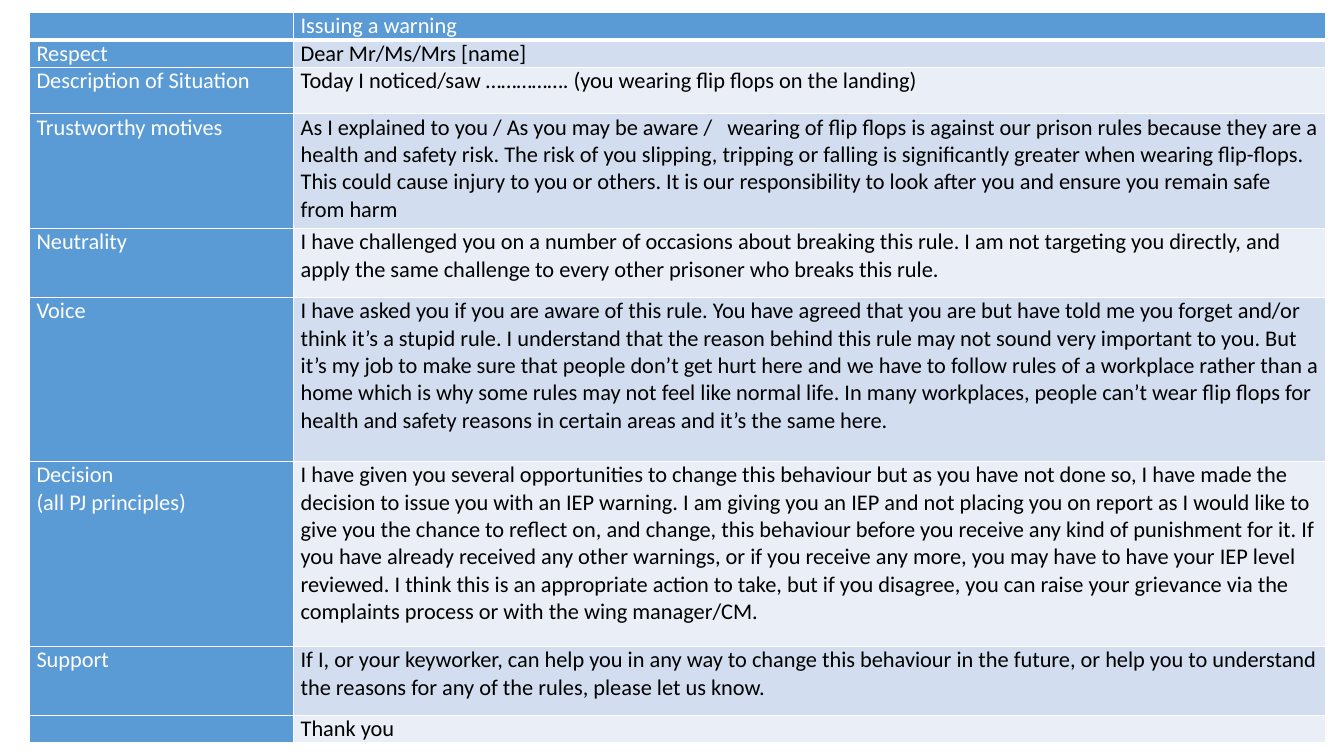
from lxml.etree import SubElement
from pptx import Presentation
from pptx.dml.color import RGBColor
from pptx.oxml.ns import qn
from pptx.util import Pt

FONT, SIZE = "Calibri", 16
BLUE, BAND_DARK, BAND_LIGHT = "5B9BD5", "D2DEEF", "EAEFF7"
WHITE, BLACK = "FFFFFF", "000000"

# Each row: height, label, wording of the letter
ROWS = [
    (19.5, "", "Issuing a warning"),
    (19.5, "Respect", "Dear Mr/Ms/Mrs [name]"),
    (33, "Description of Situation",
     "Today I noticed/saw ……………. (you wearing flip flops on the landing)"),
    (82, "Trustworthy motives",
     "As I explained to you / As you may be aware /   wearing of flip flops is against our "
     "prison rules because they are a health and safety risk. The risk of you slipping, "
     "tripping or falling is significantly greater when wearing flip-flops. This could cause "
     "injury to you or others. It is our responsibility to look after you and ensure you "
     "remain safe from harm"),
    (49.3, "Neutrality",
     "I have challenged you on a number of occasions about breaking this rule. I am not "
     "targeting you directly, and apply the same challenge to every other prisoner who "
     "breaks this rule."),
    (117.2, "Voice",
     "I have asked you if you are aware of this rule. You have agreed that you are but have "
     "told me you forget and/or think it’s a stupid rule. I understand that the reason behind "
     "this rule may not sound very important to you. But it’s my job to make sure that people "
     "don’t get hurt here and we have to follow rules of a workplace rather than a home which "
     "is why some rules may not feel like normal life. In many workplaces, people can’t wear "
     "flip flops for health and safety reasons in certain areas and it’s the same here."),
    (132, "Decision\n(all PJ principles)",
     "I have given you several opportunities to change this behaviour but as you have not "
     "done so, I have made the decision to issue you with an IEP warning. I am giving you an "
     "IEP and not placing you on report as I would like to give you the chance to reflect on, "
     "and change, this behaviour before you receive any kind of punishment for it. If you "
     "have already received any other warnings, or if you receive any more, you may have to "
     "have your IEP level reviewed. I think this is an appropriate action to take, but if you "
     "disagree, you can raise your grievance via the complaints process or with the wing "
     "manager/CM."),
    (49.3, "Support",
     "If I, or your keyworker, can help you in any way to change this behaviour in the "
     "future, or help you to understand the reasons for any of the rules, please let us know."),
    (19.5, "", "Thank you"),
]


def paint(color_format, color):
    color_format.rgb = RGBColor.from_string(color)


def add_borders(cell, bottom_width):
    properties = cell._tc.get_or_add_tcPr()
    widths = {"a:lnL": 1, "a:lnR": 1, "a:lnT": 1, "a:lnB": bottom_width}
    for position, (side, width) in enumerate(widths.items()):
        line = SubElement(properties, qn(side), w=str(Pt(width)))
        fill = SubElement(line, qn("a:solidFill"))
        SubElement(fill, qn("a:srgbClr"), val=WHITE)
        properties.insert(position, line)  # borders come before the fill


# Deck and page
deck = Presentation()
deck.slide_width, deck.slide_height = Pt(960), Pt(540)
page = deck.slides.add_slide(deck.slide_layouts[6])

# Table grid
total_height = sum(height for height, label, wording in ROWS)
table = page.shapes.add_table(
    len(ROWS), 2, Pt(21.2), Pt(9), Pt(926), Pt(total_height)).table
table.first_row = table.horz_banding = False
table.columns[0].width, table.columns[1].width = Pt(188.7), Pt(737.3)

# Rows: blue header and label column, banded wording
for row, (height, label, wording) in enumerate(ROWS):
    table.rows[row].height = Pt(height)
    band = BAND_DARK if row % 2 else BAND_LIGHT
    for column, text in enumerate((label, wording)):
        on_blue = row == 0 or column == 0
        cell = table.cell(row, column)
        cell.margin_left = cell.margin_right = Pt(4.9)
        cell.margin_top = cell.margin_bottom = Pt(0)
        cell.fill.solid()
        paint(cell.fill.fore_color, BLUE if on_blue else band)
        add_borders(cell, 3 if row == 0 else 1)

        frame = cell.text_frame
        for number, line_text in enumerate(text.split("\n")):
            para = frame.add_paragraph() if number else frame.paragraphs[0]
            if not line_text:
                # Size of an empty cell, so that its row stays low
                SubElement(para._p, qn("a:endParaRPr"), sz=str(SIZE * 100))
                continue
            span = para.add_run()
            span.text = line_text
            span.font.name, span.font.size = FONT, Pt(SIZE)
            paint(span.font.color, WHITE if on_blue else BLACK)

deck.save("out.pptx")
